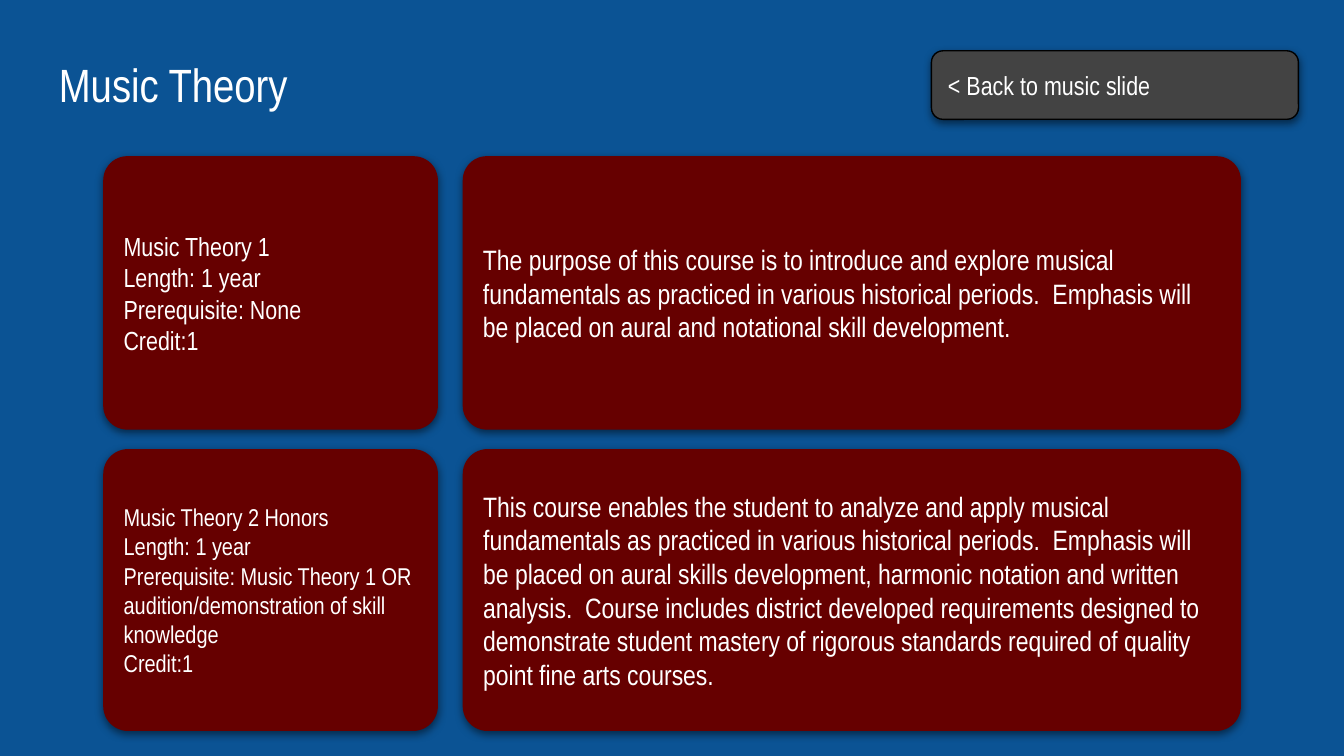
from lxml import etree
from pptx import Presentation
from pptx.dml.color import RGBColor
from pptx.enum.shapes import MSO_SHAPE
from pptx.enum.text import MSO_ANCHOR, PP_ALIGN
from pptx.oxml import parse_xml
from pptx.oxml.ns import nsdecls, qn
from pptx.util import Pt

ROUNDED = MSO_SHAPE.ROUNDED_RECTANGLE
TOP, MIDDLE = MSO_ANCHOR.TOP, MSO_ANCHOR.MIDDLE
LEFT = PP_ALIGN.LEFT

BLUE = RGBColor(0x0B, 0x53, 0x94)
MAROON = RGBColor(0x66, 0x00, 0x00)
GRAY = RGBColor(0x43, 0x43, 0x43)
BLACK = RGBColor(0x00, 0x00, 0x00)
WHITE = RGBColor(0xFF, 0xFF, 0xFF)

FONT = "Arial Narrow"
INSET = 7.2
FACTS_LEFT, FACTS_WIDTH = 55.3, 179.3
SUMMARY_LEFT, SUMMARY_WIDTH = 247.9, 416.9
SUMMARY_SIZE = 15

# top, height, size of the facts, facts, summary
COURSES = [
    (83.7, 146.5, 14,
     ["Music Theory 1", "Length: 1 year", "Prerequisite: None", "Credit:1"],
     "The purpose of this course is to introduce and explore musical "
     "fundamentals as practiced in various historical periods.  Emphasis will "
     "be placed on aural and notational skill development."),
    (240.6, 151, 13,
     ["Music Theory 2 Honors", "Length: 1 year",
      "Prerequisite: Music Theory 1 OR audition/demonstration of skill knowledge",
      "Credit:1"],
     "This course enables the student to analyze and apply musical "
     "fundamentals as practiced in various historical periods.  Emphasis will "
     "be placed on aural skills development, harmonic notation and written "
     "analysis.  Course includes district developed requirements designed to "
     "demonstrate student mastery of rigorous standards required of quality "
     "point fine arts courses."),
]


def write_text(shape, lines, size, anchor):
    frame = shape.text_frame
    frame.word_wrap = True
    frame.vertical_anchor = anchor
    frame.margin_left = frame.margin_right = Pt(INSET)
    frame.margin_top = frame.margin_bottom = Pt(INSET)
    frame.text = "\n".join(lines)
    for paragraph in frame.paragraphs:
        paragraph.alignment = LEFT
        for run in paragraph.runs:
            run.font.name = FONT
            run.font.size = Pt(size)
            run.font.color.rgb = WHITE


def add_soft_shadow(shape):
    """Replace the theme shadow by a half-transparent one falling downwards."""
    shape.shadow.inherit = False
    effects = shape._element.spPr.find(qn("a:effectLst"))
    effects.append(parse_xml(
        f'<a:outerShdw {nsdecls("a")} blurRad="{Pt(4.5)}" dist="{Pt(1.5)}" '
        'dir="5400000" algn="bl" rotWithShape="0"/>'))
    color = etree.SubElement(effects[0], qn("a:srgbClr"), val=str(BLACK))
    etree.SubElement(color, qn("a:alpha"), val="50000")


def add_card(slide, left, top, width, height, lines, size,
             fill=MAROON, corner=0.088, outline=None):
    card = slide.shapes.add_shape(
        ROUNDED, Pt(left), Pt(top), Pt(width), Pt(height))
    card.adjustments[0] = corner
    card.fill.solid()
    card.fill.fore_color.rgb = fill
    if outline is None:
        card.line.fill.background()
    else:
        card.line.color.rgb = outline
        card.line.width = Pt(0.75)
    add_soft_shadow(card)
    write_text(card, lines, size, MIDDLE)


def add_title(slide, text):
    title = slide.shapes.add_textbox(Pt(24.5), Pt(23), Pt(671), Pt(45.4))
    write_text(title, [text], 25, TOP)


def main():
    deck = Presentation()
    deck.slide_width, deck.slide_height = Pt(720), Pt(405)
    slide = deck.slides.add_slide(deck.slide_layouts[6])
    slide.background.fill.solid()
    slide.background.fill.fore_color.rgb = BLUE

    add_title(slide, "Music Theory")
    add_card(slide, 499, 27.2, 196.6, 36.7, ["< Back to music slide"], 14,
             fill=GRAY, corner=0.167, outline=BLACK)
    for top, height, facts_size, facts, summary in COURSES:
        add_card(slide, FACTS_LEFT, top, FACTS_WIDTH, height, facts, facts_size)
        add_card(slide, SUMMARY_LEFT, top, SUMMARY_WIDTH, height,
                 [summary], SUMMARY_SIZE)

    deck.save("out.pptx")


if __name__ == "__main__":
    main()
